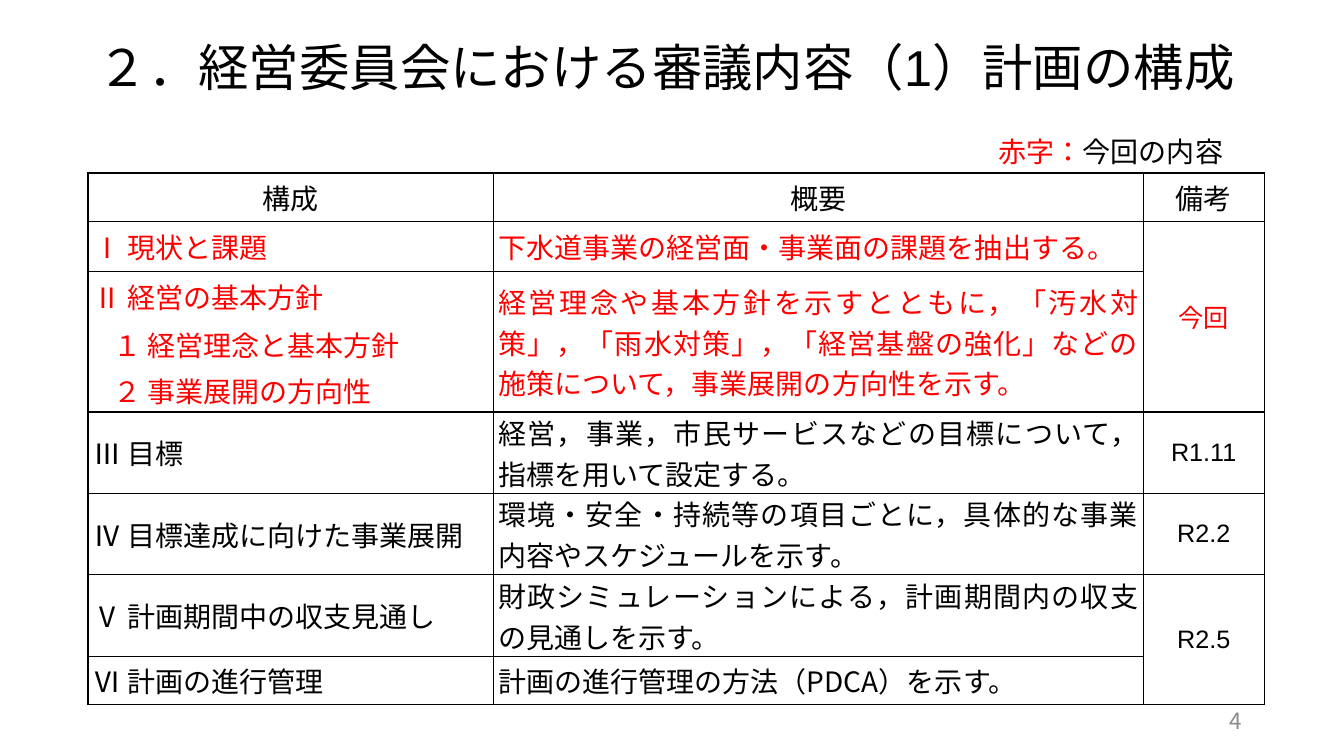
from dataclasses import dataclass

from lxml import etree
from pptx import Presentation
from pptx.dml.color import RGBColor
from pptx.enum import lang, text
from pptx.oxml import ns
from pptx.util import Pt


@dataclass(frozen=True)
class Theme:
    black: str = "000000"
    red: str = "FF0000"
    grey: str = "8C8C8C"
    latin: str = "Arial"
    japanese: str = "Noto Sans CJK JP"
    title: int = 36
    body: int = 20
    remark: int = 18
    number: int = 16
    border: int = 1


theme = Theme()
TITLE = "２．経営委員会における審議内容（1）計画の構成"
LEGEND = [("赤字：", theme.red), ("今回の内容", theme.black)]
PAGE = "4"
HEADER = ("構成", "概要", "備考")
ROWS = [
    ("Ⅰ 現状と課題", "下水道事業の経営面・事業面の課題を抽出する。", "今回"),
    ("Ⅱ 経営の基本方針",
     "経営理念や基本方針を示すとともに，「汚水対策」，「雨水対策」，「経営基盤の強化」などの"
     "施策について，事業展開の方向性を示す。", ""),
    ("１ 経営理念と基本方針", "", ""),
    ("２ 事業展開の方向性", "", ""),
    ("Ⅲ 目標", "経営，事業，市民サービスなどの目標について，指標を用いて設定する。", "R1.11"),
    ("Ⅳ 目標達成に向けた事業展開",
     "環境・安全・持続等の項目ごとに，具体的な事業内容やスケジュールを示す。", "R2.2"),
    ("Ⅴ 計画期間中の収支見通し",
     "財政シミュレーションによる，計画期間内の収支の見通しを示す。", "R2.5"),
    ("Ⅵ 計画の進行管理", "計画の進行管理の方法（PDCA）を示す。", ""),
]
COLUMN_WIDTHS = (289.4, 464.3, 86.5)
ROW_HEIGHTS = (34.6, 36, 34.6, 34.6, 31, 56.9, 58.3, 56.9, 34.6)
MERGES = [((1, 2), (4, 2)), ((2, 1), (4, 1)), ((7, 2), (8, 2))]
CURRENT_ROWS = range(1, 5)
POLICY_ROWS = range(2, 5)
TABLE_LEFT, TABLE_TOP = 62.9, 123.5


def style(paragraph, size, name, colour, align):
    paragraph.alignment = align
    font = paragraph.font
    font.size = Pt(size)
    font.name = name
    font.color.rgb = RGBColor.from_string(colour)
    properties = paragraph._p.pPr.find(ns.qn("a:defRPr"))
    etree.SubElement(properties, ns.qn("a:ea"), typeface=theme.japanese)
    for run in paragraph.runs:
        run.font.language_id = lang.MSO_LANGUAGE_ID.JAPANESE


def add_borders(cell, sides):
    properties = cell._tc.get_or_add_tcPr()
    for side in "LRTB":
        line = etree.SubElement(properties, ns.qn(f"a:ln{side}"), w=str(Pt(theme.border)))
        if side in sides:
            fill = etree.SubElement(line, ns.qn("a:solidFill"))
            etree.SubElement(fill, ns.qn("a:srgbClr"), val=theme.black)
        else:
            etree.SubElement(line, ns.qn("a:noFill"))


def policy_sides(row):
    top = "T" if row == POLICY_ROWS[0] else ""
    bottom = "B" if row == POLICY_ROWS[-1] else ""
    return "LR" + top + bottom


def add_title(slide):
    title = slide.shapes.title
    title.left, title.top, title.width, title.height = Pt(62.6), Pt(17.3), Pt(840.2), Pt(65.5)
    frame = title.text_frame
    frame.text = TITLE
    frame.auto_size = text.MSO_AUTO_SIZE.NONE
    frame.vertical_anchor = text.MSO_ANCHOR.MIDDLE
    paragraph = frame.paragraphs[0]
    paragraph.line_spacing = 0.9
    style(paragraph, theme.title, theme.latin, theme.black, text.PP_ALIGN.LEFT)


def add_text(slide, box, runs, size, name, align):
    frame = slide.shapes.add_textbox(*map(Pt, box)).text_frame
    frame.word_wrap = True
    paragraph = frame.paragraphs[0]
    for words, colour in runs:
        run = paragraph.add_run()
        run.text = words
        run.font.color.rgb = RGBColor.from_string(colour)
    style(paragraph, size, name, runs[0][1], align)
    return frame


def fill_cell(cell, words, row, column):
    cell.margin_left = cell.margin_right = Pt(3.6)
    cell.margin_top = cell.margin_bottom = 0
    cell.vertical_anchor = text.MSO_ANCHOR.MIDDLE
    add_borders(cell, policy_sides(row) if column == 0 and row in POLICY_ROWS else "LRTB")
    cell.fill.background()
    cell.text = words
    paragraph = cell.text_frame.paragraphs[0]
    remark = column == 2 and row > 0
    centred = column == 2 or row == 0
    style(
        paragraph,
        theme.remark if remark else theme.body,
        theme.latin if remark else theme.japanese,
        theme.red if row in CURRENT_ROWS else theme.black,
        text.PP_ALIGN.CENTER if centred else text.PP_ALIGN.JUSTIFY,
    )
    if column == 0 and row in POLICY_ROWS[1:]:
        paragraph._p.pPr.set("marL", str(Pt(14.4)))


def add_plan_table(slide):
    grid = [HEADER, *ROWS]
    table = slide.shapes.add_table(
        len(grid), len(HEADER), Pt(TABLE_LEFT), Pt(TABLE_TOP),
        Pt(sum(COLUMN_WIDTHS)), Pt(sum(ROW_HEIGHTS)),
    ).table
    table.first_row = table.horz_banding = False
    for column, width in zip(table.columns, COLUMN_WIDTHS):
        column.width = Pt(width)
    for row, height in zip(table.rows, ROW_HEIGHTS):
        row.height = Pt(height)
    for row, entries in enumerate(grid):
        for column, words in enumerate(entries):
            fill_cell(table.cell(row, column), words, row, column)
    for first, last in MERGES:
        table.cell(*first).merge(table.cell(*last))


def main():
    presentation = Presentation()
    presentation.slide_width, presentation.slide_height = Pt(960), Pt(540)
    slide = presentation.slides.add_slide(presentation.slide_layouts[5])
    add_title(slide)
    add_plan_table(slide)
    add_text(slide, (706.3, 92.2, 196.6, 31.7), LEGEND, theme.body, theme.latin,
             text.PP_ALIGN.LEFT)
    number = add_text(slide, (678.2, 500.4, 216, 28.8), [(PAGE, theme.grey)],
                      theme.number, theme.japanese, text.PP_ALIGN.RIGHT)
    number.vertical_anchor = text.MSO_ANCHOR.MIDDLE
    presentation.save("out.pptx")


if __name__ == "__main__":
    main()
